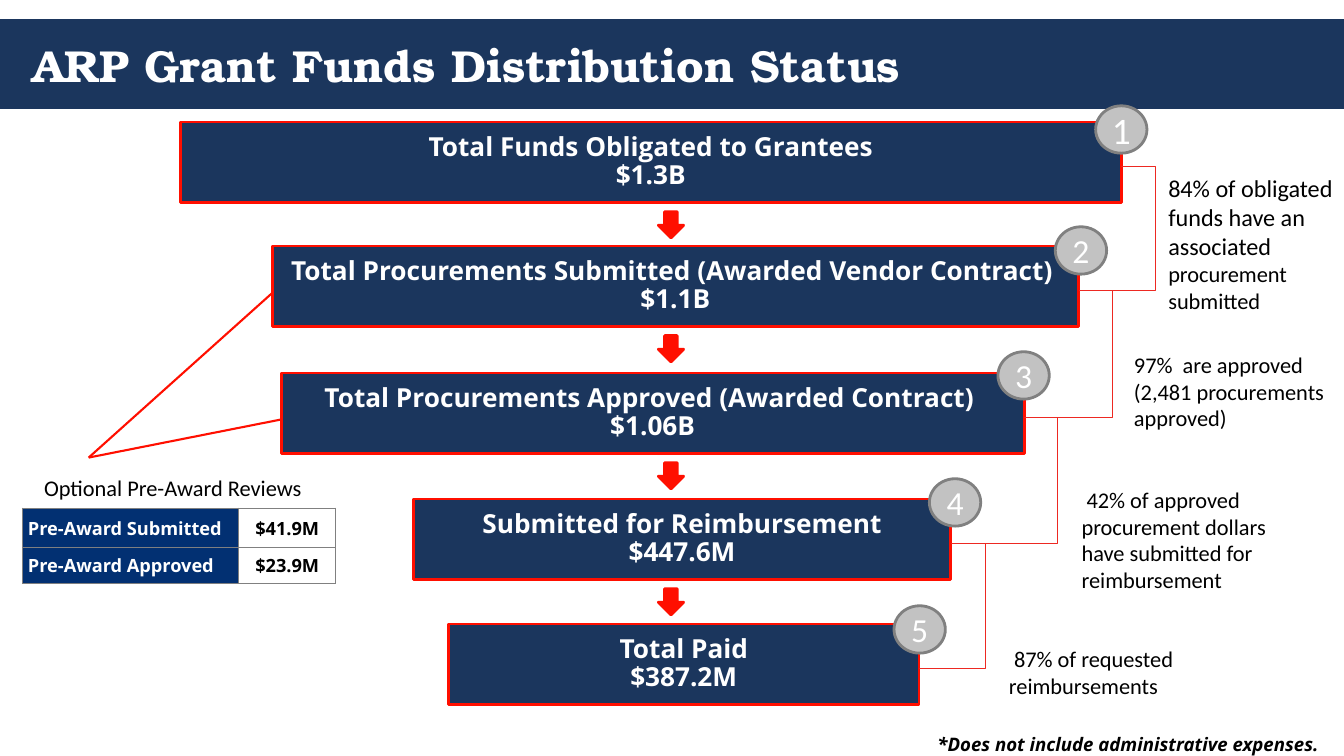
from lxml import etree
from pptx import Presentation
from pptx.dml.color import RGBColor
from pptx.enum.shapes import MSO_CONNECTOR, MSO_SHAPE
from pptx.enum.text import MSO_ANCHOR, PP_ALIGN
from pptx.oxml.ns import qn
from pptx.util import Inches, Pt

RECT, OVAL, DOWN = MSO_SHAPE.RECTANGLE, MSO_SHAPE.OVAL, MSO_SHAPE.DOWN_ARROW
LINE, ELBOW = MSO_CONNECTOR.STRAIGHT, MSO_CONNECTOR.ELBOW
TOP, MID = MSO_ANCHOR.TOP, MSO_ANCHOR.MIDDLE
LEFT, MIDDLE = PP_ALIGN.LEFT, PP_ALIGN.CENTER

WIDE, HIGH = Inches(13.33), Inches(7.5)
COL, ROW = WIDE / 100, HIGH / 100  # a grid of 100 columns by 100 rows
SANS, BODY, SERIF = "Open Sans", "Calibri", "TeX Gyre Bonum"
HUES = {"navy": "1B365D", "red": "FF0F00", "link": "ED2922", "badge": "C2C2C2",
        "edge": "808080", "head": "023072", "white": "FFFFFF", "black": "000000"}

STEP_H, BADGE_W, BADGE_H = 10.67, 3.82, 6.27
# left, top, width, badge left, badge top, badge size, label, amount
STEPS = [
    (13.42, 16.13, 70, 81.52, 14, 26.7, "Total Funds Obligated to Grantees", "$1.3B"),
    (20.25, 32.53, 60, 78.52, 30, 24,
     "Total Procurements Submitted (Awarded Vendor Contract) ", "$1.1B"),
    (20.92, 49.33, 55.28, 74.25, 46.53, 24,
     "Total Procurements Approved (Awarded Contract) ", "$1.06B"),
    (30.75, 66, 40, 69.15, 63.33, 24, "Submitted for Reimbursement", "$447.6M"),
    (33.38, 82.53, 35, 66.52, 80.13, 24, "Total Paid", "$387.2M"),
]
SPINES = [85.95, 82.8, 78.68, 73.35]
# left, top, width, height, lines with their sizes
NOTES = [
    (85.95, 22, 14.7, 20.67, [("84% of obligated funds have an associated", 17.3),
                              ("procurement submitted ", 16)]),
    (83.4, 45.47, 16.8, 12.53, [("97%  are approved", 16),
                                ("(2,481 procurements approved)", 16)]),
    (79.5, 63.33, 18.9, 16.13,
     [(" 42% of approved procurement dollars have submitted for reimbursement", 16)]),
    (74.1, 84.4, 14.85, 8.93, [(" 87% of requested reimbursements", 16)]),
]
REVIEWS = [(" Pre-Award Submitted", " $41.9M "), (" Pre-Award Approved", " $23.9M ")]


def grid(x, y):
    return round(x * COL), round(y * ROW)


def tint(name):
    return RGBColor.from_string(HUES[name])


def write(frame, lines, font, hue, bold=False, slant=False, align=LEFT,
          anchor=TOP, pad=(0.1, 0.05), wrap=True, lead=None):
    """Fill a text frame with (text, size) lines, one paragraph each."""
    frame.word_wrap = wrap
    frame.vertical_anchor = anchor
    frame.margin_left = frame.margin_right = Inches(pad[0])
    frame.margin_top = frame.margin_bottom = Inches(pad[1])
    for i, (text, size) in enumerate(lines):
        para = frame.add_paragraph() if i else frame.paragraphs[0]
        para.alignment = align
        if lead:
            para.line_spacing = lead
        run = para.add_run()
        run.text = text
        run.font.name, run.font.size = font, Pt(size)
        run.font.bold, run.font.italic = bold, slant
        run.font.color.rgb = tint(hue)


def block(slide, kind, x, y, w, h, fill, edge=None):
    shape = slide.shapes.add_shape(kind, *grid(x, y), *grid(w, h))
    shape.shadow.inherit = False
    shape.fill.solid()
    shape.fill.fore_color.rgb = tint(fill)
    if edge:
        shape.line.color.rgb = tint(edge)
        shape.line.width = Pt(2)
    else:
        shape.line.fill.background()
    return shape


def label(slide, x, y, w, h, lines, font, hue="black", **style):
    box = slide.shapes.add_textbox(*grid(x, y), *grid(w, h))
    write(box.text_frame, lines, font, hue, **style)


def join(slide, kind, start, end, hue, width):
    link = slide.shapes.add_connector(kind, *grid(*start), *grid(*end))
    link.line.color.rgb = tint(hue)
    link.line.width = Pt(width)
    etree.SubElement(link._element.spPr, qn("a:effectLst"))
    return link


def bracket(slide, low, high, spine):
    """Link two step edges by way of a vertical line at column spine."""
    link = join(slide, ELBOW, low, high, "link", 0.75)
    shape = link._element.spPr.find(qn("a:prstGeom"))
    guides = shape.find(qn("a:avLst"))
    if guides is None:
        guides = etree.SubElement(shape, qn("a:avLst"))
    bend = round((spine - low[0]) / (high[0] - low[0]) * 100000)
    etree.SubElement(guides, qn("a:gd"), name="adj1", fmla=f"val {bend}")


def frame_cell(cell):
    props = cell._tc.get_or_add_tcPr()
    for i, side in enumerate(("lnL", "lnR", "lnT", "lnB")):
        line = etree.Element(qn(f"a:{side}"), w=str(Pt(0.5)))
        fill = etree.SubElement(line, qn("a:solidFill"))
        etree.SubElement(fill, qn("a:srgbClr"), val=HUES["edge"])
        props.insert(i, line)


def table(slide, x, y, cols, rows):
    size = grid(sum(cols), sum(rows))
    grid_box = slide.shapes.add_table(len(rows), len(cols), *grid(x, y), *size).table
    for i, w in enumerate(cols):
        grid_box.columns[i].width = round(w * COL)
    for r, (h, texts) in enumerate(zip(rows, REVIEWS)):
        grid_box.rows[r].height = round(h * ROW)
        for c, text in enumerate(texts):
            cell = grid_box.cell(r, c)
            cell.fill.solid()
            cell.fill.fore_color.rgb = tint("white" if c else "head")
            write(cell.text_frame, [(text, 13)], SANS, "black" if c else "white",
                  bold=True, align=MIDDLE if c else LEFT)
            cell.vertical_anchor = MID
            cell.margin_left = cell.margin_right = cell.margin_top = Inches(0.01)
            cell.margin_bottom = 0
            frame_cell(cell)


def step(slide, x, y, w, name, sum_text):
    box = block(slide, RECT, x, y, w, STEP_H, "navy", "red")
    write(box.text_frame, [(name, 18.7), (sum_text, 18.7)], SANS, "white", bold=True,
          align=MIDDLE, anchor=MID, pad=(0.13, 0.07), lead=0.9)


def badge(slide, x, y, num, size):
    disc = block(slide, OVAL, x, y, BADGE_W, BADGE_H, "badge", "edge")
    write(disc.text_frame, [(str(num), size)], BODY, "white", align=MIDDLE,
          anchor=MID, pad=(0, 0), wrap=False)


def main():
    deck = Presentation()
    deck.slide_width, deck.slide_height = WIDE, HIGH
    slide = deck.slides.add_slide(deck.slide_layouts[6])

    block(slide, RECT, 0, 2.53, 100, 11.87, "navy")
    for end in ((29.7, 52.4), (21.15, 37.33)):
        join(slide, LINE, (6.6, 60.53), end, "red", 1.5)
    label(slide, 1.65, 2.53, 96.7, 12, [("ARP Grant Funds Distribution Status", 32)],
          SERIF, "white", bold=True, anchor=MID)

    for x, y, w, _, _, _, name, sum_text in STEPS:
        step(slide, x, y, w, name, sum_text)
    for _, y, *_ in STEPS[:-1]:
        block(slide, DOWN, 48.98, y + STEP_H + 1.2, 1.88, 3.47, "red", "red")

    ports = [(x + w, y + 5.87) for x, y, w, *_ in STEPS]
    for high, low, spine in zip(ports, ports[1:], SPINES):
        bracket(slide, low, high, spine)
    for x, y, w, h, lines in NOTES:
        label(slide, x, y, w, h, lines, BODY, pad=(0.13, 0.07))
    for num, (_, _, _, x, y, size, _, _) in enumerate(STEPS, 1):
        badge(slide, x, y, num, size)

    label(slide, -0.98, 62, 28.05, 4.93, [("Optional Pre-Award Reviews ", 16)],
          BODY, align=MIDDLE)
    table(slide, 1.65, 67.2, (16.12, 7.2), (5.2, 4.8))
    label(slide, 68.4, 95.73, 32.7, 5.33,
          [("*Does not include administrative expenses.", 13.3)], SANS,
          bold=True, slant=True, pad=(0.18, 0.09))
    deck.save("out.pptx")


if __name__ == "__main__":
    main()
